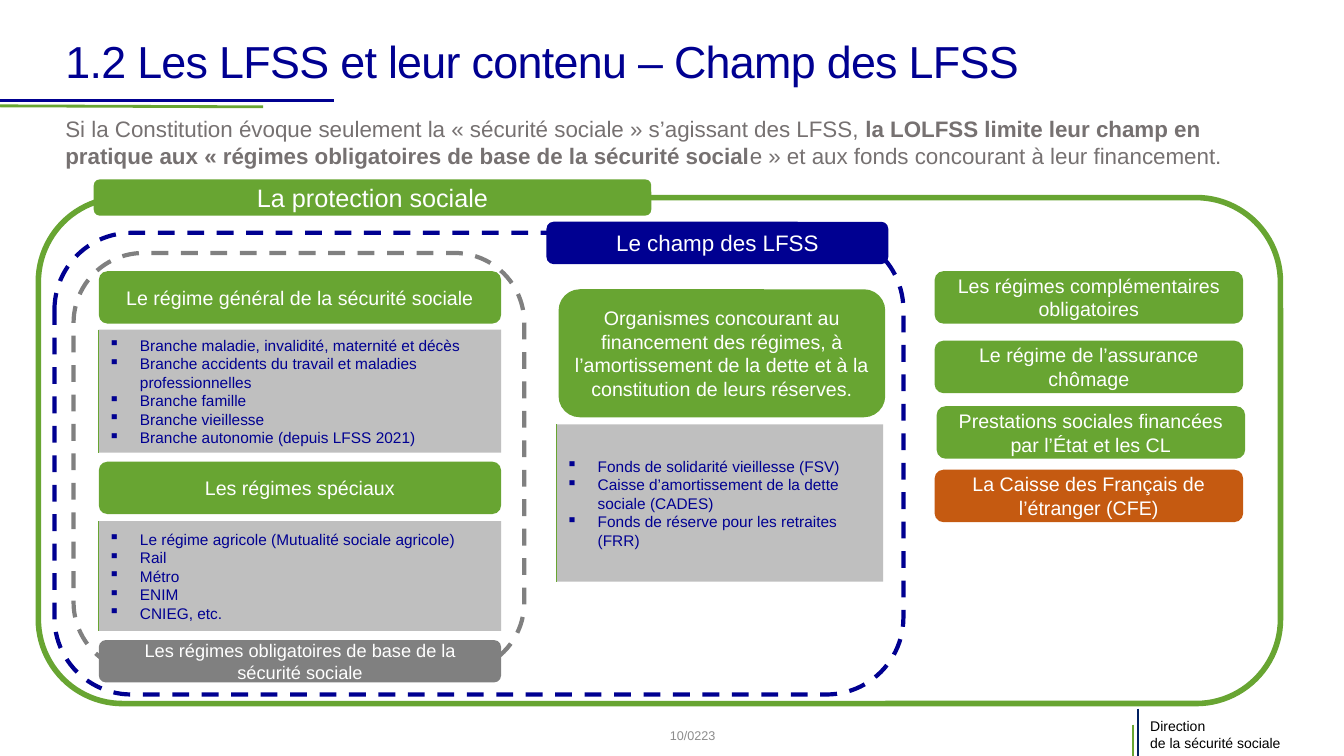
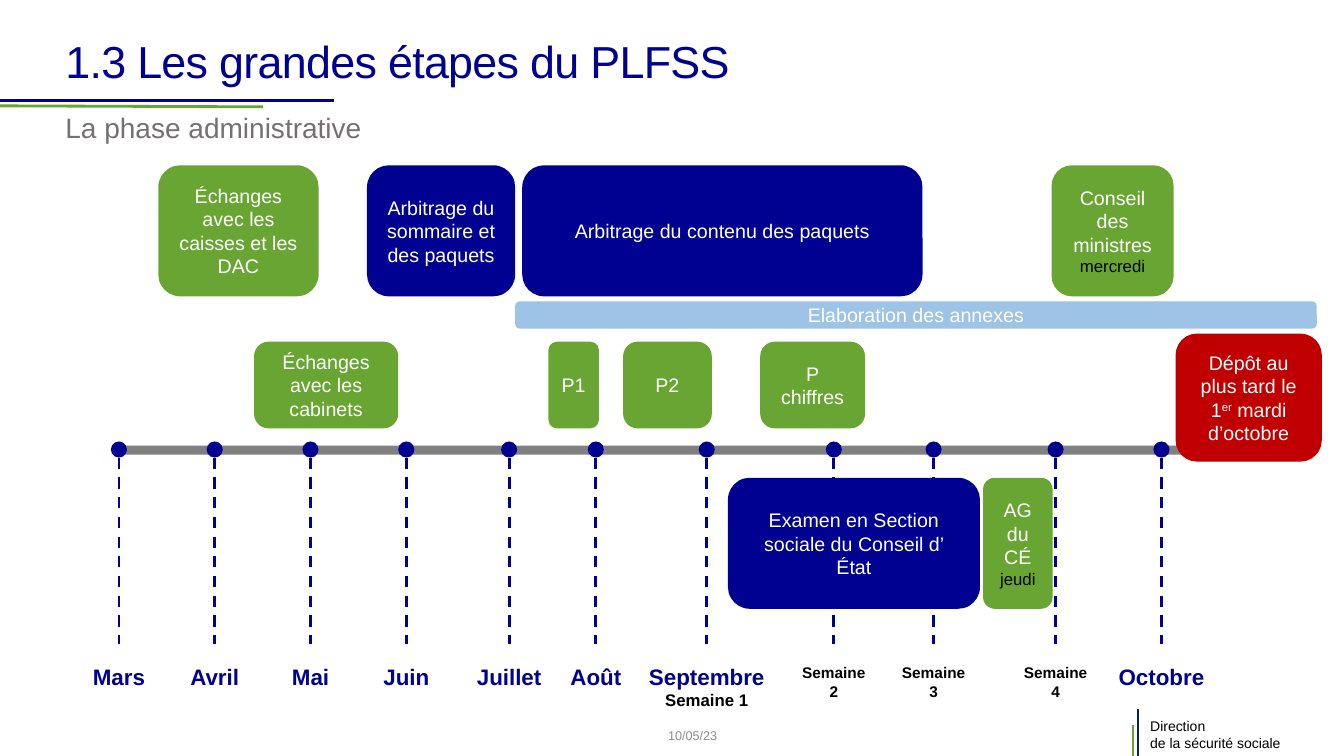
"""Build two slides on the scope of the LFSS and the stages of the PLFSS."""
from pptx import Presentation
from pptx.dml.color import RGBColor
from pptx.enum.dml import MSO_LINE
from pptx.enum.shapes import MSO_CONNECTOR, MSO_SHAPE as Shape
from pptx.enum.text import MSO_ANCHOR as Anchor, PP_ALIGN as Align
from pptx.oxml.ns import qn
from pptx.util import Inches, Pt
from lxml.etree import SubElement

FONT = "Arial"
NAVY, GREEN, GREY, SILVER = "000091", "68A532", "808080", "BFBFBF"
WHITE, BLACK, MUTED, PALE = "FFFFFF", "000000", "767171", "8C8C8C"
MIDNIGHT, ORANGE, SKY, RED = "002060", "C55A11", "9DC3E6", "C00000"

BRAND_LINES = [
    ((0, 1), (3.31, 1), NAVY, 2),
    ((0, 1.05), (2.61, 1.06), GREEN, 2),
    ((11.24, 7.19), (11.24, 7.5), GREEN, 1.5),
    ((11.29, 7.03), (11.29, 7.5), MIDNIGHT, 1.5),
]
BRAND_TEXT = ["Direction", "de la sécurité sociale"]

SCOPE_INTRO = [[
    "Si la Constitution évoque seulement la « sécurité sociale » s’agissant des LFSS, ",
    ("la LOLFSS limite leur champ en pratique aux « régimes obligatoires de base "
     "de la sécurité social", {"bold": True}),
    "e » et aux fonds concourant à leur financement.",
]]
PANELS = [
    ((0.98, 3.27, 3.99, 1.22), [
        "Branche maladie, invalidité, maternité et décès",
        "Branche accidents du travail et maladies professionnelles",
        "Branche famille",
        "Branche vieillesse",
        "Branche autonomie (depuis LFSS 2021)",
    ]),
    ((0.98, 5.17, 3.99, 1.09), [
        "Le régime agricole (Mutualité sociale agricole)",
        "Rail",
        "Métro",
        "ENIM",
        "CNIEG, etc.",
    ]),
    ((5.52, 4.21, 3.24, 1.56), [
        "Fonds de solidarité vieillesse (FSV)",
        "Caisse d’amortissement de la dette sociale (CADES)",
        "Fonds de réserve pour les retraites (FRR)",
    ]),
]
OUTLINES = [
    ((0.38, 1.96, 12.32, 5.02), GREEN, 4, None),
    ((0.73, 2.51, 4.47, 4.16), GREY, 3, MSO_LINE.DASH),
    ((0.54, 2.31, 8.42, 4.58), NAVY, 3, MSO_LINE.DASH),
]
SCOPE_BOXES = [
    ((0.93, 1.78, 5.53, 0.36), GREEN, ["La protection sociale"], 18),
    ((5.42, 2.2, 3.39, 0.42), NAVY, ["Le champ des LFSS"], 16),
    ((0.98, 2.69, 3.99, 0.52), GREEN, ["Le régime général de la sécurité sociale"], 14),
    ((0.98, 4.58, 3.99, 0.52), GREEN, ["Les régimes spéciaux"], 14),
    ((0.98, 6.35, 3.99, 0.42), GREY,
     ["Les régimes obligatoires de base de la sécurité sociale"], 13),
    ((5.54, 2.87, 3.24, 1.27), GREEN,
     ["Organismes concourant au financement des régimes, à l’amortissement "
      "de la dette et à la constitution de leurs réserves."], 14),
    ((9.27, 2.69, 3.06, 0.52), GREEN, ["Les régimes complémentaires obligatoires"], 14),
    ((9.27, 3.38, 3.06, 0.52), GREEN, ["Le régime de l’assurance chômage"], 14),
    ((9.29, 4.03, 3.06, 0.52), GREEN,
     ["Prestations sociales financées par l’État et les CL"], 14),
    ((9.27, 4.66, 3.06, 0.52), ORANGE, ["La Caisse des Français de l’étranger (CFE)"], 14),
]

MONTH = {"size": Pt(16), "color": NAVY}
WEEK = {"size": Pt(11), "color": BLACK}
DAY = {"size": Pt(12), "color": BLACK}
MILESTONES = [
    (1.18, 0.91, ["Mars"], MONTH),
    (2.13, 0.91, ["Avril"], MONTH),
    (3.08, 0.91, ["Mai"], MONTH),
    (4.03, 0.91, ["Juin"], MONTH),
    (5.05, 0.91, ["Juillet"], MONTH),
    (5.91, 0.91, ["Août"], MONTH),
    (7.01, 1.43, ["Septembre", [("Semaine 1", DAY)]], MONTH),
    (8.27, 0.91, ["Semaine 2"], WEEK),
    (9.26, 0.91, ["Semaine 3"], WEEK),
    (10.47, 0.91, ["Semaine 4"], WEEK),
    (11.52, 1.43, ["Octobre"], MONTH),
]
DOT, DOT_TOP, TICK_END, LABEL_TOP = 0.16, 4.38, 6.39, 6.53
STAGES = [
    ((1.57, 1.64, 1.59, 1.3), GREEN, ["Échanges avec les caisses et les DAC"]),
    ((3.64, 1.64, 1.47, 1.3), NAVY, ["Arbitrage du sommaire et des paquets"]),
    ((5.18, 1.64, 3.97, 1.3), NAVY, ["Arbitrage du contenu des paquets"]),
    ((10.43, 1.64, 1.21, 1.3), GREEN, ["Conseil des ministres", [("mercredi", DAY)]]),
    ((5.11, 2.99, 7.95, 0.27), SKY, ["Elaboration des annexes"]),
    ((2.52, 3.39, 1.43, 0.86), GREEN, ["Échanges avec les cabinets"]),
    ((5.44, 3.39, 0.5, 0.86), GREEN, ["P1"]),
    ((6.18, 3.39, 0.88, 0.86), GREEN, ["P2"]),
    ((7.54, 3.39, 1.04, 0.86), GREEN, ["P chiffres"]),
    ((11.66, 3.31, 1.45, 1.27), RED,
     [["Dépôt au plus tard le 1", ("er", {"baseline": 30000}), " mardi d’octobre"]]),
    ((7.22, 4.74, 2.5, 1.3), NAVY, ["Examen en Section sociale du Conseil d’ État"]),
    ((9.75, 4.74, 0.69, 1.3), GREEN, ["AG du CÉ", [("jeudi", DAY)]]),
]


def rgb(value):
    return RGBColor.from_string(value)


def write(frame, paragraphs, look, layout=None, anchor=Anchor.MIDDLE, bullet=False):
    frame.word_wrap = True
    frame.vertical_anchor = anchor
    for index, content in enumerate(paragraphs):
        para = frame.paragraphs[0] if index == 0 else frame.add_paragraph()
        for name, value in (layout or {}).items():
            setattr(para, name, value)
        if bullet:
            props = para._p.get_or_add_pPr()
            props.set("marL", str(Inches(0.31)))
            props.set("indent", str(-Inches(0.31)))
            SubElement(props, qn("a:buChar")).set("char", "▪")
        for piece in [content] if isinstance(content, str) else content:
            words, extra = (piece, {}) if isinstance(piece, str) else piece
            span = para.add_run()
            span.text = words
            for name, value in {"name": FONT, **look, **extra}.items():
                if name == "color":
                    span.font.color.rgb = rgb(value)
                elif name in ("spc", "baseline"):
                    span._r.get_or_add_rPr().set(name, str(value))
                else:
                    setattr(span.font, name, value)


def add_text(page, place, paragraphs, look, layout=None, anchor=Anchor.MIDDLE):
    box = page.shapes.add_textbox(*map(Inches, place))
    write(box.text_frame, paragraphs, look, layout, anchor)


def add_box(page, place, fill, kind=Shape.ROUNDED_RECTANGLE):
    box = page.shapes.add_shape(kind, *map(Inches, place))
    box.shadow.inherit = False
    box.line.fill.background()
    if fill:
        box.fill.solid()
        box.fill.fore_color.rgb = rgb(fill)
    else:
        box.fill.background()
    return box


def add_label_box(page, place, fill, paragraphs, size=14):
    box = add_box(page, place, fill)
    write(box.text_frame, paragraphs, {"size": Pt(size), "color": WHITE},
          {"alignment": Align.CENTER})


def style_line(line, color, width, dash=None):
    line.color.rgb = rgb(color)
    line.width = Pt(width)
    if dash:
        line.dash_style = dash


def add_line(page, start, end, color, width, dash=None):
    line = page.shapes.add_connector(MSO_CONNECTOR.STRAIGHT, *map(Inches, start + end))
    SubElement(line._element.spPr, qn("a:effectLst"))
    style_line(line.line, color, width, dash)


def add_page(deck, title, intro, intro_top, intro_size, footer):
    page = deck.slides.add_slide(deck.slide_layouts[6])
    for line in BRAND_LINES:
        add_line(page, *line)
    add_text(page, (11.31, 7.09, 1.9, 0.39), BRAND_TEXT, {"size": Pt(10), "color": BLACK})
    add_text(page, (5.37, 7.1, 3, 0.4), [footer], {"size": Pt(9), "color": PALE},
             {"alignment": Align.CENTER})
    add_text(page, (0.55, 0.28, 12.23, 0.71), [title],
             {"size": Pt(32), "color": NAVY, "spc": -50}, {"line_spacing": 0.9})
    add_text(page, (0.55, intro_top, 12.23, 0.47), intro,
             {"size": Pt(intro_size), "color": MUTED},
             {"space_before": Pt(10), "space_after": Pt(6)}, Anchor.TOP)
    return page


def build_scope(deck):
    page = add_page(deck, "1.2 Les LFSS et leur contenu – Champ des LFSS",
                    SCOPE_INTRO, 1.09, 16, "10/0223")
    for place, items in PANELS:
        panel = add_box(page, place, SILVER, Shape.RECTANGLE)
        write(panel.text_frame, items, {"size": Pt(11), "color": NAVY},
              {"alignment": Align.LEFT}, bullet=True)
        left, top, _, height = place
        add_line(page, (left, top), (left, top + height), GREEN, 0.5)
    for place, color, width, dash in OUTLINES:
        style_line(add_box(page, place, None).line, color, width, dash)
    for box in SCOPE_BOXES:
        add_label_box(page, *box)


def build_stages(deck):
    page = add_page(deck, "1.3 Les grandes étapes du PLFSS",
                    ["La phase administrative"], 1.05, 20, "10/05/23")
    axis = add_box(page, (1.13, 4.42, 10.63, 0.09), GREY)
    axis.adjustments[0] = 0.5
    for center, width, label, look in MILESTONES:
        add_box(page, (center - DOT / 2, DOT_TOP, DOT, DOT), NAVY, Shape.OVAL)
        add_line(page, (center, DOT_TOP + DOT), (center, TICK_END), NAVY, 2, MSO_LINE.DASH)
        add_text(page, (center - width / 2, LABEL_TOP, width, 0.47), label,
                 {"bold": True, **look}, {"alignment": Align.CENTER}, Anchor.TOP)
    for stage in STAGES:
        add_label_box(page, *stage)


def main():
    deck = Presentation()
    deck.slide_width, deck.slide_height = Inches(13.33), Inches(7.5)
    build_scope(deck)
    build_stages(deck)
    deck.save("out.pptx")


if __name__ == "__main__":
    main()
